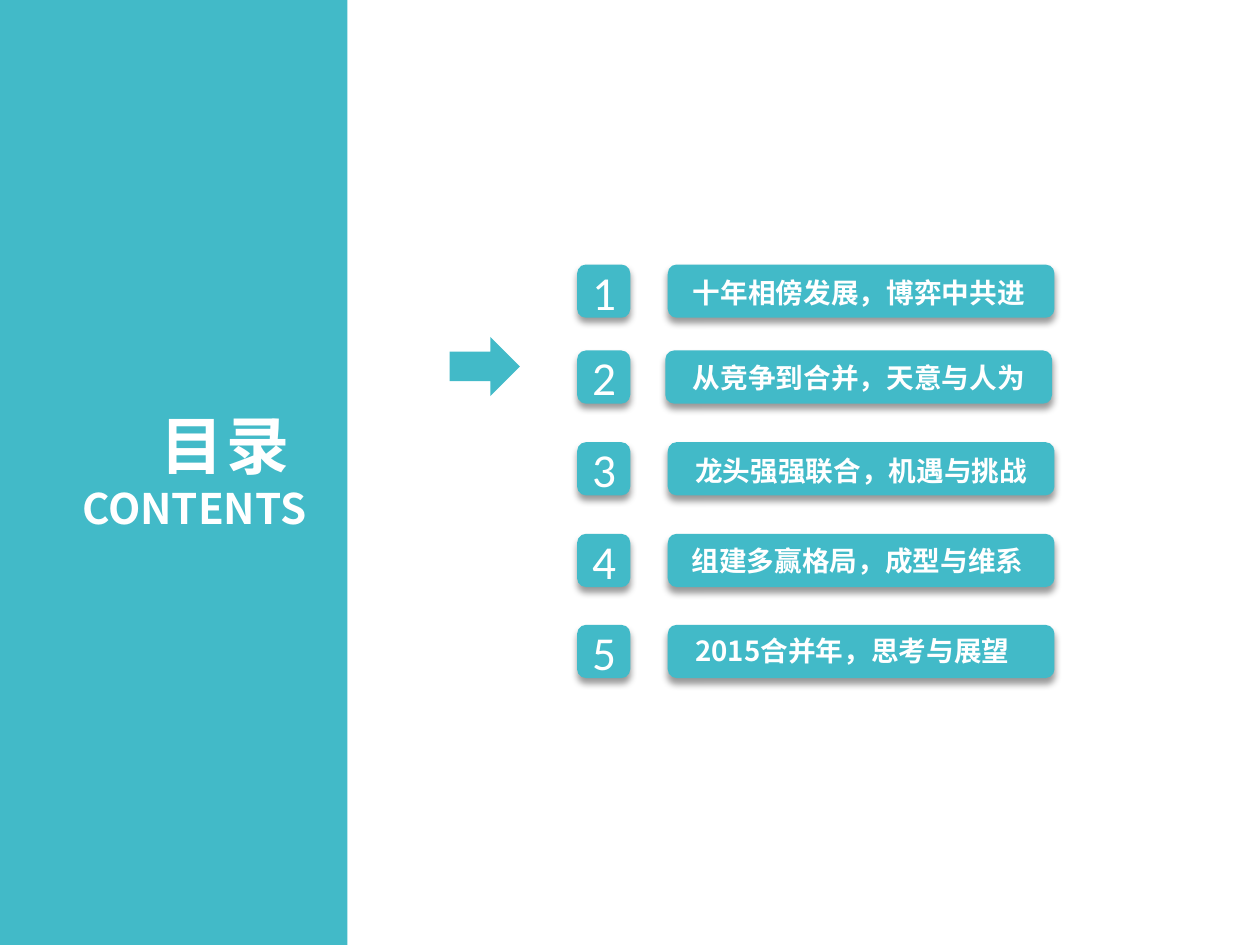
from dataclasses import dataclass

from lxml.etree import SubElement
from pptx import Presentation
from pptx.dml.color import RGBColor
from pptx.enum.shapes import MSO_SHAPE as Shape
from pptx.enum.text import MSO_ANCHOR as Anchor, PP_ALIGN as Align
from pptx.oxml.ns import qn
from pptx.util import Pt

TITLE = "目录 "
SUBTITLE = "CONTENTS"
# number, text, row top, bar left, label left, label offset from row top
ENTRIES = [
    ("1", "十年相傍发展，博弈中共进", 151.2, 381.6, 388.8, 2.9),
    ("2", "从竞争到合并，天意与人为", 200.3, 380.2, 388.8, 2.2),
    ("3", "龙头强强联合，机遇与挑战", 252.7, 381.6, 390.2, 2.9),
    ("4", "组建多赢格局，成型与维系", 305.1, 381.6, 388.1, 2.2),
    ("5", "2015合并年，思考与展望", 357.1, 381.6, 390.2, 1.4),
]
BADGE_LEFT, BADGE_SIZE = 329.8, 30.4
BAR_WIDTH = 221
LABEL_WIDTH, LABEL_HEIGHT = 219, 26.6


@dataclass(frozen=True)
class Theme:
    teal: RGBColor = RGBColor.from_string("42BAC8")
    white: RGBColor = RGBColor.from_string("FFFFFF")
    shadow: str = "000000"
    chinese: str = "Noto Sans CJK SC"
    latin: str = "Calibri"
    title: float = 36
    subtitle: float = 24
    number: float = 27
    label: float = 15.8


THEME = Theme()


def write(paragraph, text, size, font=THEME.chinese, bold=True, align=Align.LEFT, spacing=0):
    paragraph.alignment = align
    run = paragraph.add_run()
    run.text = text
    run.font.size = Pt(size)
    run.font.bold = bold
    run.font.color.rgb = THEME.white
    run.font.name = font
    properties = run.font._element
    SubElement(properties, qn("a:ea"), typeface=font)
    if spacing:
        properties.set("spc", str(round(spacing * 100)))


def add_block(shapes, kind, left, top, width, height, shadow=False):
    shape = shapes.add_shape(kind, Pt(left), Pt(top), Pt(width), Pt(height))
    shape.fill.solid()
    shape.fill.fore_color.rgb = THEME.teal
    shape.line.fill.background()
    shape.shadow.inherit = False
    if shadow:
        effects = shape._element.spPr.find(qn("a:effectLst"))
        outer = SubElement(effects, qn("a:outerShdw"), blurRad=str(Pt(4)), dist=str(Pt(3)),
                           dir="5400000", algn="t", rotWithShape="0")
        color = SubElement(outer, qn("a:srgbClr"), val=THEME.shadow)
        SubElement(color, qn("a:alpha"), val="40000")
    return shape


def add_text_frame(shapes, left, top, width, height):
    frame = shapes.add_textbox(Pt(left), Pt(top), Pt(width), Pt(height)).text_frame
    frame.word_wrap = True
    return frame


def add_entry(shapes, number, text, top, bar_left, label_left, label_offset):
    badge = add_block(shapes, Shape.ROUNDED_RECTANGLE, BADGE_LEFT, top,
                      BADGE_SIZE, BADGE_SIZE, shadow=True)
    badge.text_frame.vertical_anchor = Anchor.MIDDLE
    write(badge.text_frame.paragraphs[0], number, THEME.number,
          font=THEME.latin, bold=False, align=Align.CENTER)
    group = shapes.add_group_shape().shapes
    add_block(group, Shape.ROUNDED_RECTANGLE, bar_left, top, BAR_WIDTH, BADGE_SIZE, shadow=True)
    label = add_text_frame(group, label_left, top + label_offset, LABEL_WIDTH, LABEL_HEIGHT)
    write(label.paragraphs[0], text, THEME.label)


def main():
    presentation = Presentation()
    presentation.slide_width, presentation.slide_height = Pt(720), Pt(540)
    slide = presentation.slides.add_slide(presentation.slide_layouts[6])
    shapes = slide.shapes

    add_block(shapes, Shape.RECTANGLE, 0, 0, 198.5, 540)
    heading = add_text_frame(shapes, 16.6, 229, 165.6, 80)
    write(heading.paragraphs[0], TITLE, THEME.title, align=Align.RIGHT, spacing=1.5)
    write(heading.add_paragraph(), SUBTITLE, THEME.subtitle, align=Align.RIGHT)

    for entry in ENTRIES:
        add_entry(shapes, *entry)

    arrow = add_block(shapes, Shape.DOWN_ARROW, 260.1, 189.3, 33.8, 40.2)
    arrow.rotation = 270
    presentation.save("out.pptx")


if __name__ == "__main__":
    main()
